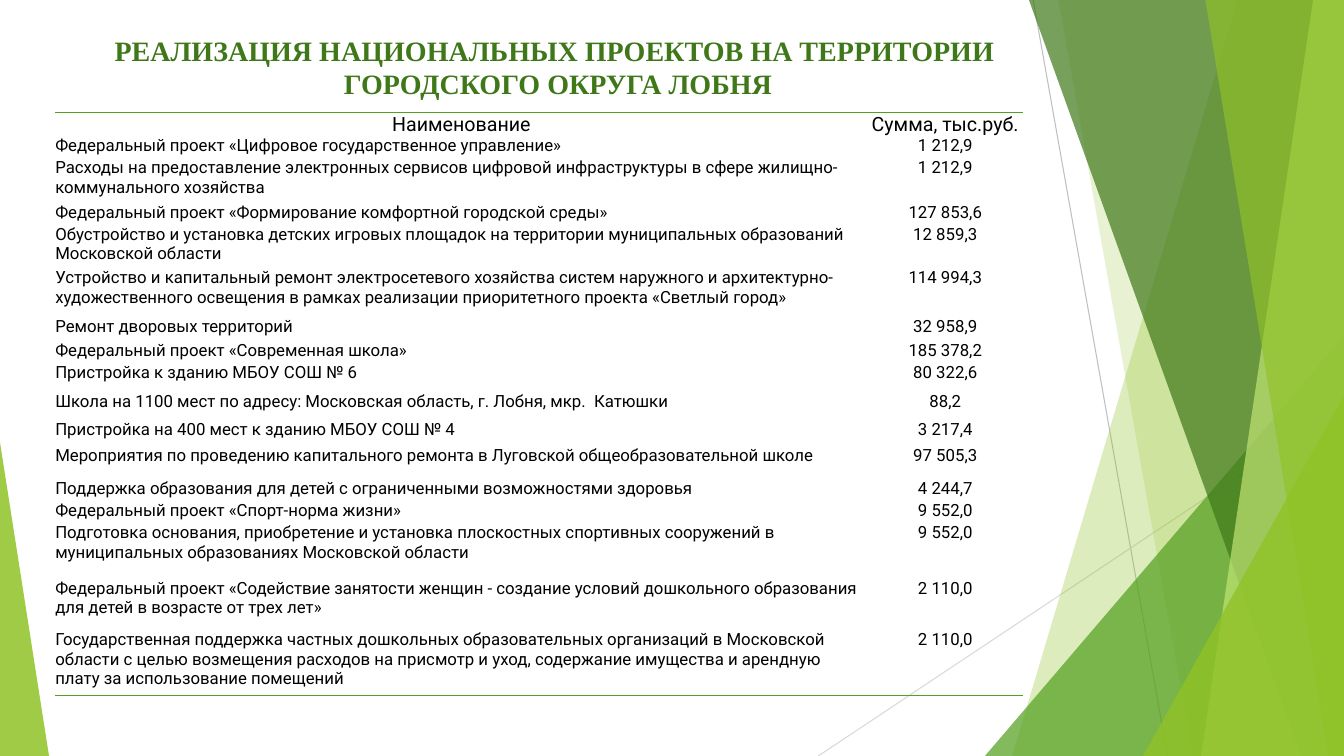
import pptx
import pptx.dml.color
import pptx.enum.shapes
import pptx.enum.text
import pptx.oxml
import pptx.oxml.ns
import pptx.oxml.xmlchemy
import pptx.util

Pt = pptx.util.Pt
ALIGN = pptx.enum.text.PP_ALIGN
SHAPE = pptx.enum.shapes.MSO_SHAPE
qn = pptx.oxml.ns.qn
new_element = pptx.oxml.xmlchemy.OxmlElement

# Content
TITLE = "РЕАЛИЗАЦИЯ НАЦИОНАЛЬНЫХ ПРОЕКТОВ НА ТЕРРИТОРИИ\v ГОРОДСКОГО ОКРУГА ЛОБНЯ"

# Name, amount, row height
ROWS = [
    ("Наименование", "Сумма, тыс.руб.", 12.2),
    ("Федеральный проект «Цифровое государственное управление»", "1 212,9", 15.8),
    ("Расходы на предоставление электронных сервисов цифровой инфраструктуры "
     "в сфере жилищно-коммунального хозяйства", "1 212,9", 31.7),
    ("Федеральный проект «Формирование комфортной городской среды»", "127 853,6", 15.8),
    ("Обустройство и установка детских игровых площадок на территории "
     "муниципальных образований Московской области", "12 859,3", 31),
    ("Устройство и капитальный ремонт электросетевого хозяйства систем наружного "
     "и архитектурно-художественного освещения в рамках реализации приоритетного "
     "проекта «Светлый город»", "114 994,3", 34.6),
    ("Ремонт дворовых территорий", "32 958,9", 17.3),
    ("Федеральный проект «Современная школа»", "185 378,2", 15.8),
    ("Пристройка к зданию МБОУ СОШ № 6", "80 322,6", 20.9),
    ("Школа на 1100 мест по адресу: Московская область, г. Лобня, мкр.  Катюшки",
     "88,2", 20.2),
    ("Пристройка на 400 мест к зданию МБОУ СОШ № 4", "3 217,4", 18),
    ("Мероприятия по проведению капитального ремонта в Луговской "
     "общеобразовательной школе", "97 505,3", 23.8),
    ("Поддержка образования для детей с ограниченными возможностями здоровья",
     "4 244,7", 15.8),
    ("Федеральный проект «Спорт-норма жизни»", "9 552,0", 15.8),
    ("Подготовка основания, приобретение и установка плоскостных спортивных "
     "сооружений в муниципальных образованиях Московской области", "9 552,0", 39.6),
    ("Федеральный проект «Содействие занятости женщин - создание условий дошкольного "
     "образования для детей в возрасте от трех лет»", "2 110,0", 36.7),
    ("Государственная поддержка частных дошкольных образовательных организаций "
     "в Московской области с целью возмещения расходов на присмотр и уход, содержание "
     "имущества и арендную плату за использование помещений", "2 110,0", 46.8),
]
COLUMNS = (580.3, 110.9)

# Decoration: thin lines, then facets from back to front
WIDTH, HEIGHT = 960, 540
LINES = [((738, 0), (834, HEIGHT), "BFBFBF"), ((WIDTH, 290), (584.5, HEIGHT), "D9D9D9")]
# "band": left edge at top and bottom, running to the right side of the page
# "triangle": left, top, width, apex position; standing on the bottom of the page
FACETS = [
    ("band", (884, 723), "90C226", 30),
    ("band", (756, 852), "90C226", 20),
    ("triangle", (703.5, 240, 256.5, 1), "54A021", 72),
    ("band", (735, 929.5), "3F7819", 70),
    ("band", (938, 858), "C0E474", 70),
    ("band", (861, 949), "90C226", 65),
    ("triangle", (816.5, 283, 143.5, 1), "90C226", 80),
    ("triangle", (0, 316, 35, 0), "90C226", 85),
]


def color(value):
    return pptx.dml.color.RGBColor.from_string(value)


def write(frame, text, size=12, font="Roboto", ink="000000", bold=False, align=ALIGN.LEFT):
    para = frame.paragraphs[0]
    para.text = text
    para.alignment = align
    for span in para.runs:
        span.font.size = Pt(size)
        span.font.name = font
        span.font.bold = bold
        span.font.color.rgb = color(ink)


def draw_line(page, start, end, ink):
    line = page.shapes.add_connector(
        pptx.enum.shapes.MSO_CONNECTOR.STRAIGHT, *map(Pt, start + end))
    line.line.color.rgb = color(ink)
    line.line.width = Pt(0.75)
    line._element.spPr.append(new_element("a:effectLst"))


def draw_facet(page, kind, place, ink, opacity):
    if kind == "band":
        top, bottom = place
        outline = page.shapes.build_freeform(Pt(top), 0)
        outline.add_line_segments(
            [(Pt(WIDTH), 0), (Pt(WIDTH), Pt(HEIGHT)), (Pt(bottom), Pt(HEIGHT))])
        facet = outline.convert_to_shape()
    else:
        left, top, width, apex = place
        facet = page.shapes.add_shape(
            SHAPE.ISOSCELES_TRIANGLE, Pt(left), Pt(top), Pt(width), Pt(HEIGHT - top))
        facet.adjustments[0] = apex
    facet.shadow.inherit = False
    facet.line.fill.background()
    facet.fill.solid()
    facet.fill.fore_color.rgb = color(ink)
    alpha = new_element("a:alpha")
    alpha.set("val", str(opacity * 1000))
    facet._element.spPr.find(".//" + qn("a:srgbClr")).append(alpha)


def draw_border(cell, side, ink):
    border = pptx.oxml.parse_xml(
        '<a:%s xmlns:a="http://schemas.openxmlformats.org/drawingml/2006/main" w="12700">'
        '<a:solidFill><a:srgbClr val="%s"/></a:solidFill></a:%s>' % (side, ink, side))
    cell._tc.get_or_add_tcPr().insert(0, border)


def add_projects(page):
    frame = page.shapes.add_table(
        len(ROWS), len(COLUMNS), Pt(39.5), Pt(80.6), Pt(sum(COLUMNS)),
        Pt(sum(row[-1] for row in ROWS)))
    table = frame.table
    table.first_row = table.horz_banding = False
    # Plain table style without grid
    style = table._tbl.tblPr.find(qn("a:tableStyleId"))
    style.text = "{2D5ABB26-0587-4C30-8999-92F81FD0307C}"
    for column, width in zip(table.columns, COLUMNS):
        column.width = Pt(width)
    last = len(ROWS) - 1
    for index, (name, amount, height) in enumerate(ROWS):
        table.rows[index].height = Pt(height)
        for place, text in enumerate((name, amount)):
            cell = table.cell(index, place)
            cell.margin_left = cell.margin_right = cell.margin_top = cell.margin_bottom = 0
            cell.fill.background()
            centered = index == 0 or place == 1
            write(cell.text_frame, text, size=14 if index == 0 else 12,
                  align=ALIGN.CENTER if centered else ALIGN.LEFT)
            if index in (0, last):
                draw_border(cell, "lnT" if index == 0 else "lnB", "54A021")


def main():
    deck = pptx.Presentation()
    deck.slide_width, deck.slide_height = Pt(WIDTH), Pt(HEIGHT)
    page = deck.slides.add_slide(deck.slide_layouts[5])

    # Background decoration
    for line in LINES:
        draw_line(page, *line)
    for facet in FACETS:
        draw_facet(page, *facet)

    # Title
    title = page.shapes.title
    title.left, title.top, title.width, title.height = map(Pt, (50.4, 20.2, 691.2, 50.4))
    title.text_frame.word_wrap = True
    title.text_frame.auto_size = pptx.enum.text.MSO_AUTO_SIZE.NONE
    title.text_frame.vertical_anchor = pptx.enum.text.MSO_ANCHOR.TOP
    write(title.text_frame, TITLE, size=20, font="Times New Roman", ink="3F7819",
          bold=True, align=ALIGN.CENTER)

    # Table of projects
    add_projects(page)
    deck.save("out.pptx")


if __name__ == "__main__":
    main()
